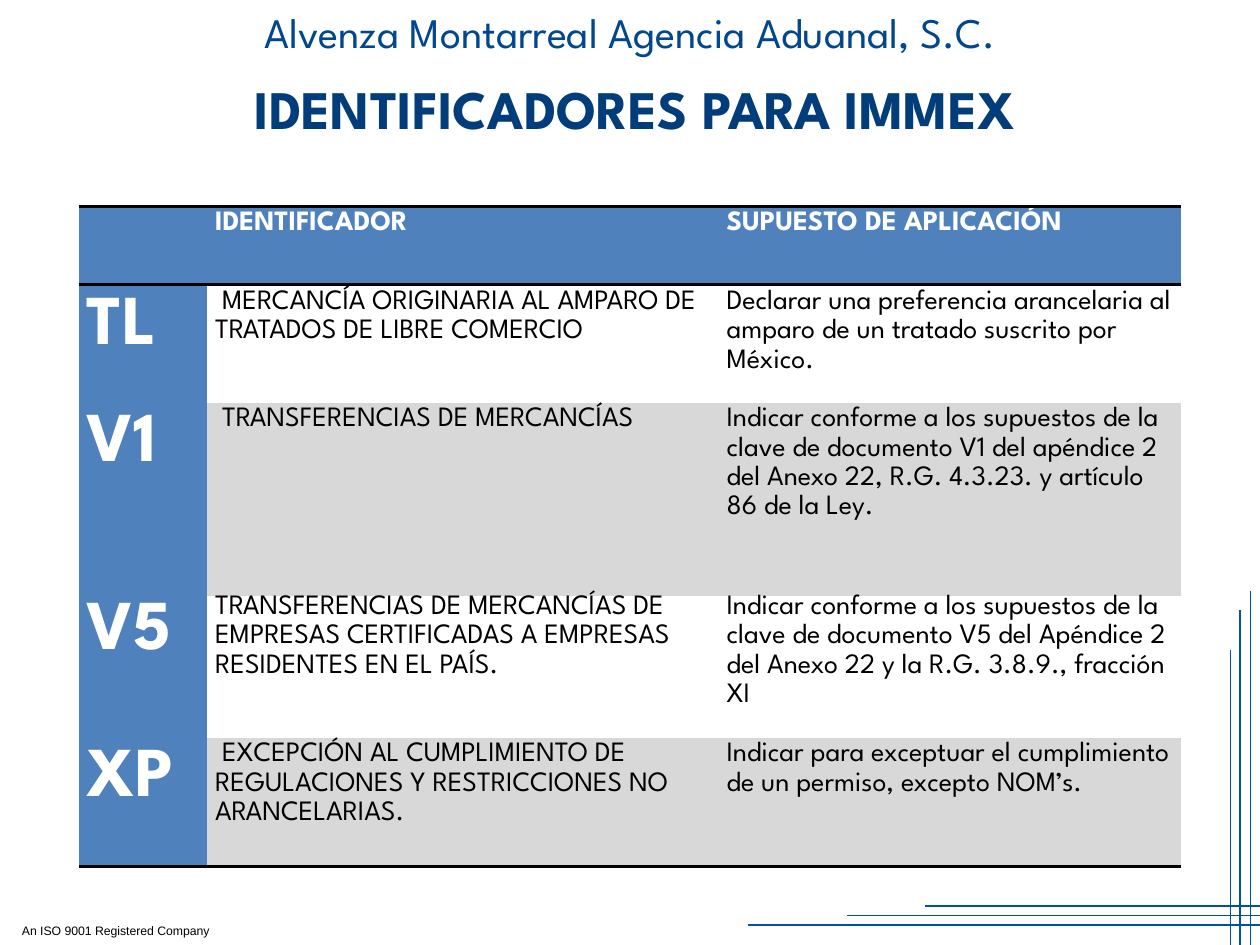
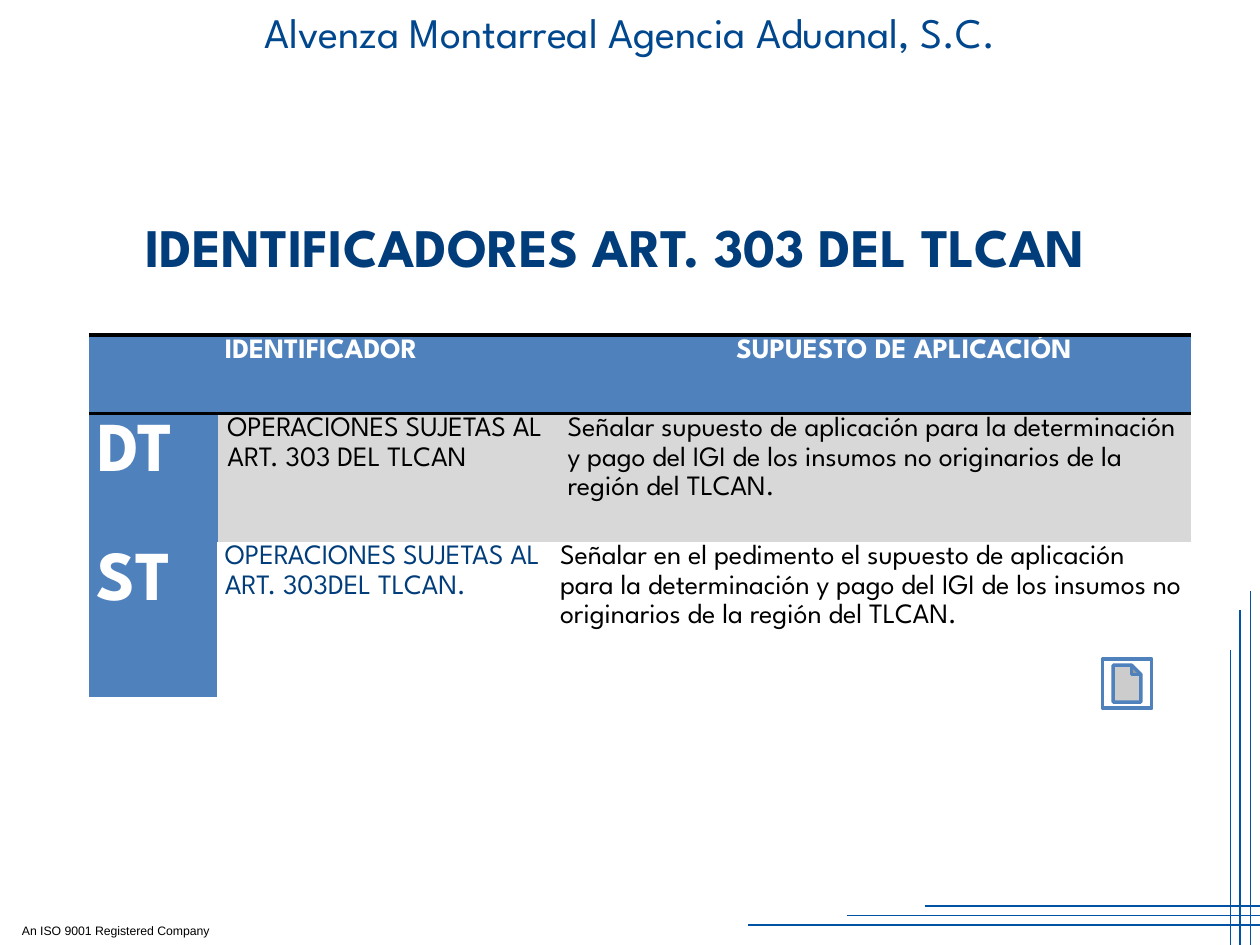
from dataclasses import dataclass
from lxml import etree
from pptx import Presentation
from pptx.dml.color import RGBColor
from pptx.enum.shapes import MSO_CONNECTOR, MSO_SHAPE
from pptx.enum.text import MSO_ANCHOR, MSO_AUTO_SIZE, PP_ALIGN
from pptx.oxml.ns import qn
from pptx.util import Pt

LINE = MSO_CONNECTOR.STRAIGHT
BUTTON = MSO_SHAPE.ACTION_BUTTON_DOCUMENT
TOP, MIDDLE = MSO_ANCHOR.TOP, MSO_ANCHOR.MIDDLE
FIXED = MSO_AUTO_SIZE.NONE
LEFT, CENTER = PP_ALIGN.LEFT, PP_ALIGN.CENTER
WIDE, HIGH = 720, 540
PLAIN = "{2D5ABB26-0587-4C30-8999-92F81FD0307C}"  # table style without grid


@dataclass(frozen=True)
class Theme:
    face: str = "League Spartan"
    small: str = "Arial"
    navy: str = "003D7A"
    brand: str = "00478E"
    rule: str = "0052A4"
    blue: str = "4F81BD"
    gray: str = "D8D8D8"
    white: str = "FFFFFF"
    black: str = "000000"
    title: float = 31
    firm: float = 24
    code: float = 40
    body: float = 16
    note: float = 7


@dataclass(frozen=True)
class Strip:
    """One table row: top is measured from the grid's upper edge."""
    top: float
    high: float
    cols: tuple
    texts: tuple
    fill: str = ""
    tint: str = "000000"   # colour of the middle text
    lead: float = 0        # first line indent of the middle text
    pad: float = 4.5
    edges: str = ""        # sides with a heavy border
    head: bool = False


T = Theme()
COLS = (73.44, 292.32, 264.24)
HEADS = ("", "IDENTIFICADOR", "SUPUESTO DE APLICACIÓN")


def color(code):
    return RGBColor.from_string(code)


def style(para, size, tint, bold=False, face=T.face):
    font = para.font
    font.name, font.size, font.bold = face, Pt(size), bold
    font.color.rgb = color(tint)


def place(shape, box):
    shape.left, shape.top, shape.width, shape.height = map(Pt, box)


def label(slide, box, text, size, tint, face, align, anchor, wrap):
    frame = slide.shapes.add_textbox(*map(Pt, box)).text_frame
    frame.word_wrap, frame.vertical_anchor = wrap, anchor
    para = frame.paragraphs[0]
    para.text, para.alignment = text, align
    style(para, size, tint, face=face)


def rules(slide):
    """Corner lines that run off the right and bottom edges."""
    ends = [(x, y, x, HIGH)
            for x, y in ((714.4, 337.7), (708.6, 348.5), (703.2, 371.5))]
    ends += [(x, y, WIDE, y)
             for x, y in ((427.7, 528.5), (483.8, 523.1), (528.5, 517.7))]
    for end in ends:
        line = slide.shapes.add_connector(LINE, *map(Pt, end))
        line.line.color.rgb, line.line.width = color(T.rule), Pt(0.75)
        etree.SubElement(line.element.spPr, qn("a:effectLst"))


def base(deck, text, box):
    """Slide with company name, title, footer and corner lines."""
    slide = deck.slides.add_slide(deck.slide_layouts[5])
    label(slide, (5.5, 524, 124.5, 16), "An ISO 9001 Registered Company",
          T.note, T.black, T.small, LEFT, MIDDLE, False)
    rules(slide)
    label(slide, (0, 0, WIDE, 55.5), "Alvenza Montarreal Agencia Aduanal, S.C.",
          T.firm, T.brand, T.face, CENTER, TOP, True)
    title = slide.shapes.title
    place(title, box)
    frame = title.text_frame
    frame.text = text
    frame.auto_size, frame.vertical_anchor = FIXED, TOP
    para = frame.paragraphs[0]
    para.alignment = CENTER
    style(para, T.title, T.navy, True)
    return slide


def border(cell, side):
    props = cell._tc.get_or_add_tcPr()
    line = etree.SubElement(props, qn("a:ln" + side), w=str(Pt(2.25)))
    fill = etree.SubElement(line, qn("a:solidFill"))
    etree.SubElement(fill, qn("a:srgbClr"), val=T.black)


def paint(cell, tint):
    if tint:
        cell.fill.solid()
        cell.fill.fore_color.rgb = color(tint)
    else:
        cell.fill.background()


def write(cell, text, size, tint, bold, lead):
    para = cell.text_frame.paragraphs[0]
    para.text = text
    para.line_spacing, para.space_after = 1.15, Pt(10)
    if lead:
        para._p.get_or_add_pPr().set("indent", str(Pt(lead)))
    style(para, size, tint, bold)


def band(slide, left, top, strip):
    """Draw one strip as a one-row table."""
    box = (left, top + strip.top, sum(strip.cols), strip.high)
    holder = slide.shapes.add_table(1, 3, *map(Pt, box))
    table = holder.table
    table.first_row = table.horz_banding = False
    next(holder.element.iter(qn("a:tableStyleId"))).text = PLAIN
    for n, (wide, text) in enumerate(zip(strip.cols, strip.texts)):
        table.columns[n].width = Pt(wide)
        cell = table.cell(0, n)
        cell.margin_left = cell.margin_right = Pt(strip.pad)
        cell.margin_top = cell.margin_bottom = 0
        for side in strip.edges:
            border(cell, side)
        bold = strip.head or n == 0
        paint(cell, T.blue if bold else strip.fill)
        size = T.code if n == 0 and not strip.head else T.body
        tint = T.white if bold else strip.tint if n == 1 else T.black
        write(cell, text, size, tint, bold, strip.lead if n == 1 else 0)


def grid(slide, left, top, strips):
    for strip in strips:
        band(slide, left, top, strip)


HEADER = Strip(0, 44.64, COLS, HEADS, edges="TB", head=True)

IMMEX = (
    Strip(112.3, 110.2, COLS,
          ("V1", "TRANSFERENCIAS DE MERCANCÍAS",
           "Indicar conforme a los supuestos de la clave de documento V1 del "
           "apéndice 2 del Anexo 22, R.G. 4.3.23. y artículo 86 de la Ley."),
          fill=T.gray, lead=4),
    HEADER,
    Strip(219.6, 90, COLS,
          ("V5", "TRANSFERENCIAS DE MERCANCÍAS DE EMPRESAS CERTIFICADAS A "
           "EMPRESAS RESIDENTES EN EL PAÍS.",
           "Indicar conforme a los supuestos de la clave de documento V5 del "
           "Apéndice 2 del Anexo 22 y la R.G. 3.8.9., fracción XI")),
    Strip(303.8, 73.4, COLS,
          ("XP", "EXCEPCIÓN AL CUMPLIMIENTO DE REGULACIONES Y RESTRICCIONES "
           "NO ARANCELARIAS.",
           "Indicar para exceptuar el cumplimiento de un permiso, excepto "
           "NOM’s."),
          fill=T.gray, lead=4, edges="B"),
    Strip(45.2, 67.7, COLS,
          ("TL", "MERCANCÍA ORIGINARIA AL AMPARO DE TRATADOS DE LIBRE COMERCIO",
           "Declarar una preferencia arancelaria al amparo de un tratado "
           "suscrito por México."), lead=4),
)

TLCAN = (
    Strip(44.64, 73.4, (74.16, 194.4, 361.44),
          ("DT", "OPERACIONES SUJETAS AL ART. 303 DEL TLCAN",
           "Señalar supuesto de aplicación para la determinación y pago del "
           "IGI de los insumos no originarios de la región del TLCAN."),
          fill=T.gray, pad=5.2),
    HEADER,
    Strip(118, 88.6, (73.44, 191.52, 365.04),
          ("ST", "OPERACIONES SUJETAS AL ART. 303DEL TLCAN.",
           "Señalar en el pedimento el supuesto de aplicación para la "
           "determinación y pago del IGI de los insumos no originarios de la "
           "región del TLCAN."), tint=T.navy),
)


def button(slide, box):
    shape = slide.shapes.add_shape(BUTTON, *map(Pt, box))
    shape.shadow.inherit = False
    shape.fill.solid()
    shape.fill.fore_color.rgb = color(T.white)
    shape.line.color.rgb, shape.line.width = color(T.blue), Pt(2)


def main():
    deck = Presentation()
    deck.slide_width, deck.slide_height = Pt(WIDE), Pt(HIGH)

    # Identifiers for IMMEX
    slide = base(deck, "IDENTIFICADORES PARA IMMEX", (67.7, 39.6, 590.4, 44.6))
    grid(slide, 45, 118.1, IMMEX)

    # Identifiers for article 303
    slide = base(deck, "IDENTIFICADORES ART. 303 DEL TLCAN",
                 (56.2, 118.1, 590.4, 44.6))
    grid(slide, 50.6, 191.5, TLCAN)
    button(slide, (630, 376.6, 28.1, 28.1))

    deck.save("out.pptx")


if __name__ == "__main__":
    main()
